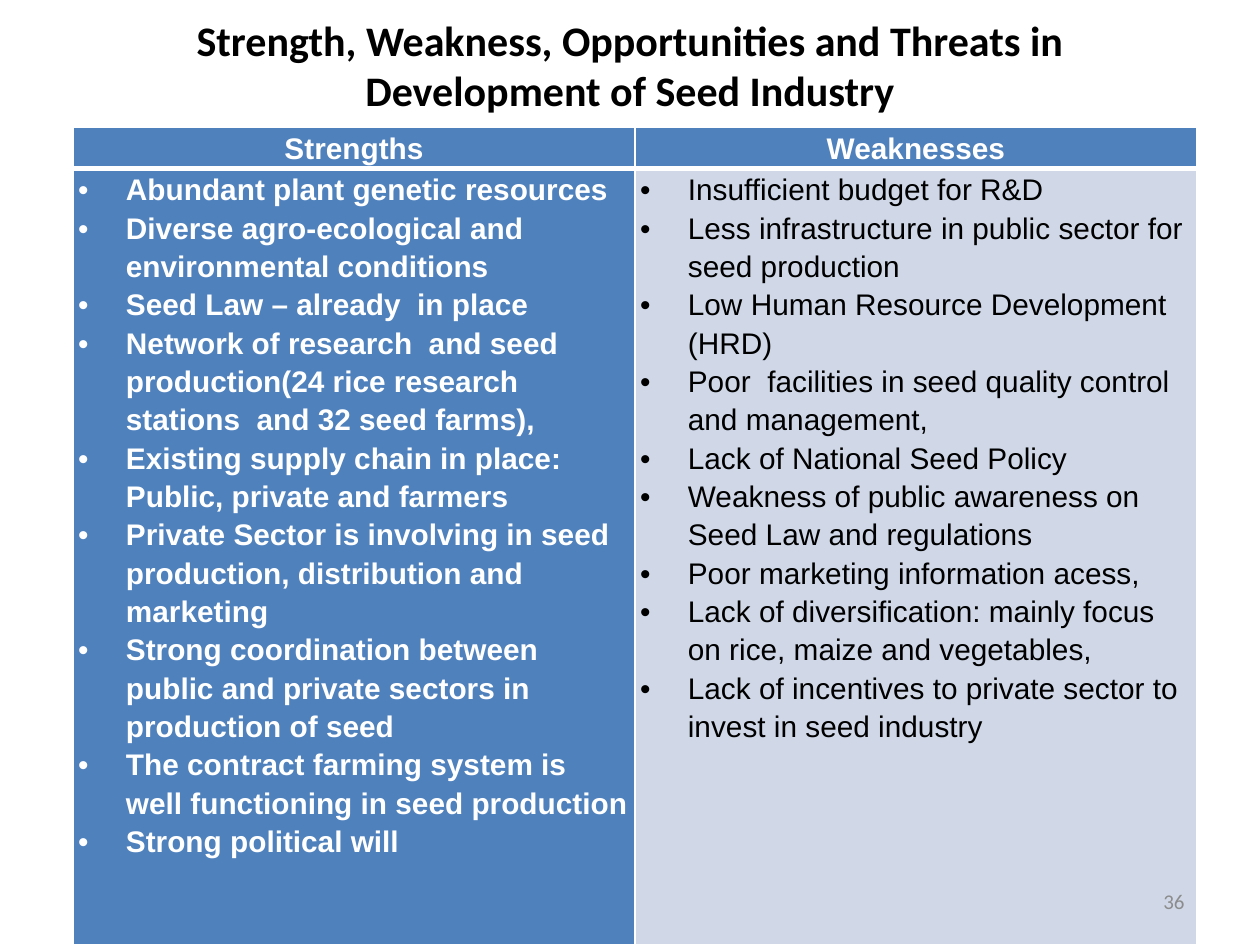
"""Build the seed industry strengths and weaknesses slide."""
from dataclasses import dataclass

from lxml.etree import SubElement
from pptx import Presentation
from pptx.dml.color import RGBColor as Rgb
from pptx.enum.text import MSO_ANCHOR as Anchor, PP_ALIGN as Align
from pptx.oxml.ns import qn
from pptx.util import Emu, Inches, Pt

WIDTH, HEIGHT = Inches(10), Inches(7.5)


@dataclass(frozen=True)
class Theme:
    heading_font: str = "Calibri"
    body_font: str = "Arial"
    title_size: float = 24
    body_size: float = 17
    number_size: float = 12
    spacing: float = 1.15
    blue: str = "4F81BD"
    pale: str = "D0D8E8"
    white: str = "FFFFFF"
    black: str = "000000"
    grey: str = "8C8C8C"


@dataclass(frozen=True)
class Area:
    left: float
    top: float
    width: float
    height: float

    def lengths(self) -> tuple:
        return (Emu(int(self.left * WIDTH)), Emu(int(self.top * HEIGHT)),
                Emu(int(self.width * WIDTH)), Emu(int(self.height * HEIGHT)))


@dataclass(frozen=True)
class Column:
    heading: str
    points: tuple
    fill: str
    color: str
    bold: bool


THEME = Theme()
TITLE_AREA = Area(0.05, 0.004, 0.9, 0.116)
TABLE_AREA = Area(0.058, 0.135, 0.892, 0.783)
NUMBER_AREA = Area(0.717, 0.927, 0.233, 0.053)
ROW_HEIGHTS = (0.14, 3.12)
BODY_BOTTOM_MARGIN = 0.3

COLUMNS = (
    Column("Strengths", (
        "Abundant plant genetic resources",
        "Diverse agro-ecological and environmental conditions",
        "Seed Law – already  in place",
        "Network of research  and seed production(24 rice research stations  and 32 seed farms),",
        "Existing supply chain in place: Public, private and farmers",
        "Private Sector is involving in seed production, distribution and marketing",
        "Strong coordination between public and private sectors in production of seed",
        "The contract farming system is well functioning in seed production",
        "Strong political will",
    ), THEME.blue, THEME.white, True),
    Column("Weaknesses", (
        "Insufficient budget for R&D",
        "Less infrastructure in public sector for  seed production",
        "Low Human Resource Development (HRD)",
        "Poor  facilities in seed quality control and management,",
        "Lack of National Seed Policy",
        "Weakness of public awareness on Seed Law and regulations",
        "Poor marketing information acess,",
        "Lack of diversification: mainly focus on rice, maize and vegetables,",
        "Lack of incentives to private sector to invest in seed industry",
    ), THEME.pale, THEME.black, False),
)


def write(para, text: str, *, font: str = THEME.body_font, size: float = THEME.body_size,
          color: str = THEME.black, bold: bool = False, align=Align.LEFT,
          spacing: float = 1.0, bullet: bool = False) -> None:
    """Fill a paragraph with one formatted span."""
    para.alignment = align
    para.line_spacing = spacing
    if bullet:
        properties = para._p.get_or_add_pPr()
        properties.set("marL", str(Inches(0.38)))
        properties.set("indent", str(-Inches(0.38)))
        SubElement(properties, qn("a:buFont"), typeface=THEME.body_font)
        SubElement(properties, qn("a:buChar"), char="•")
    span = para.add_run()
    span.text = text
    span.font.name = font
    span.font.size = Pt(size)
    span.font.bold = bold
    span.font.color.rgb = Rgb.from_string(color)


def add_label(page, area: Area, text: str, top_inset: float = 0, **style) -> None:
    """Add a wrapped, vertically centred text box."""
    frame = page.shapes.add_textbox(*area.lengths()).text_frame
    frame.word_wrap = True
    frame.vertical_anchor = Anchor.MIDDLE
    frame.margin_top, frame.margin_bottom = Inches(top_inset), 0
    write(frame.paragraphs[0], text, font=THEME.heading_font, **style)


def style_cell(cell, fill: str, top: float, bottom: float, bottom_margin: float = 0) -> None:
    """Give a cell its margins, white borders and fill."""
    cell.margin_left = cell.margin_right = Inches(0.04)
    cell.margin_top, cell.margin_bottom = 0, Inches(bottom_margin)
    properties = cell._tc.get_or_add_tcPr()
    for side, width in (("L", 1), ("R", 1), ("T", top), ("B", bottom)):
        line = SubElement(properties, qn(f"a:ln{side}"), w=str(Pt(width)))
        SubElement(SubElement(line, qn("a:solidFill")), qn("a:srgbClr"), val=THEME.white)
    cell.fill.solid()
    cell.fill.fore_color.rgb = Rgb.from_string(fill)


def add_comparison(page, area: Area, columns: tuple) -> None:
    """Add the table, whose rows grow to fit one bullet list per column."""
    holder = page.shapes.add_table(len(ROW_HEIGHTS), len(columns), *area.lengths())
    table = holder.table
    for row, height in zip(table.rows, ROW_HEIGHTS):
        row.height = Inches(height)
    holder.height = area.lengths()[3]
    for index, column in enumerate(columns):
        header, body = table.cell(0, index), table.cell(1, index)
        style_cell(header, THEME.blue, 1, 3)
        style_cell(body, column.fill, 3, 1, BODY_BOTTOM_MARGIN)
        write(header.text_frame.paragraphs[0], column.heading, color=THEME.white,
              bold=True, align=Align.CENTER, spacing=THEME.spacing)
        frame = body.text_frame
        for position, point in enumerate(column.points):
            para = frame.add_paragraph() if position else frame.paragraphs[0]
            write(para, point, color=column.color, bold=column.bold,
                  spacing=THEME.spacing, bullet=True)


def main() -> None:
    """Assemble and save the deck."""
    deck = Presentation()
    deck.slide_width, deck.slide_height = WIDTH, HEIGHT
    page = deck.slides.add_slide(deck.slide_layouts[6])
    add_label(page, TITLE_AREA,
              "Strength, Weakness, Opportunities and Threats in Development of Seed Industry",
              top_inset=0.1, size=THEME.title_size, bold=True, align=Align.CENTER)
    add_comparison(page, TABLE_AREA, COLUMNS)
    add_label(page, NUMBER_AREA, "36", size=THEME.number_size,
              color=THEME.grey, align=Align.RIGHT)
    deck.save("out.pptx")


if __name__ == "__main__":
    main()
